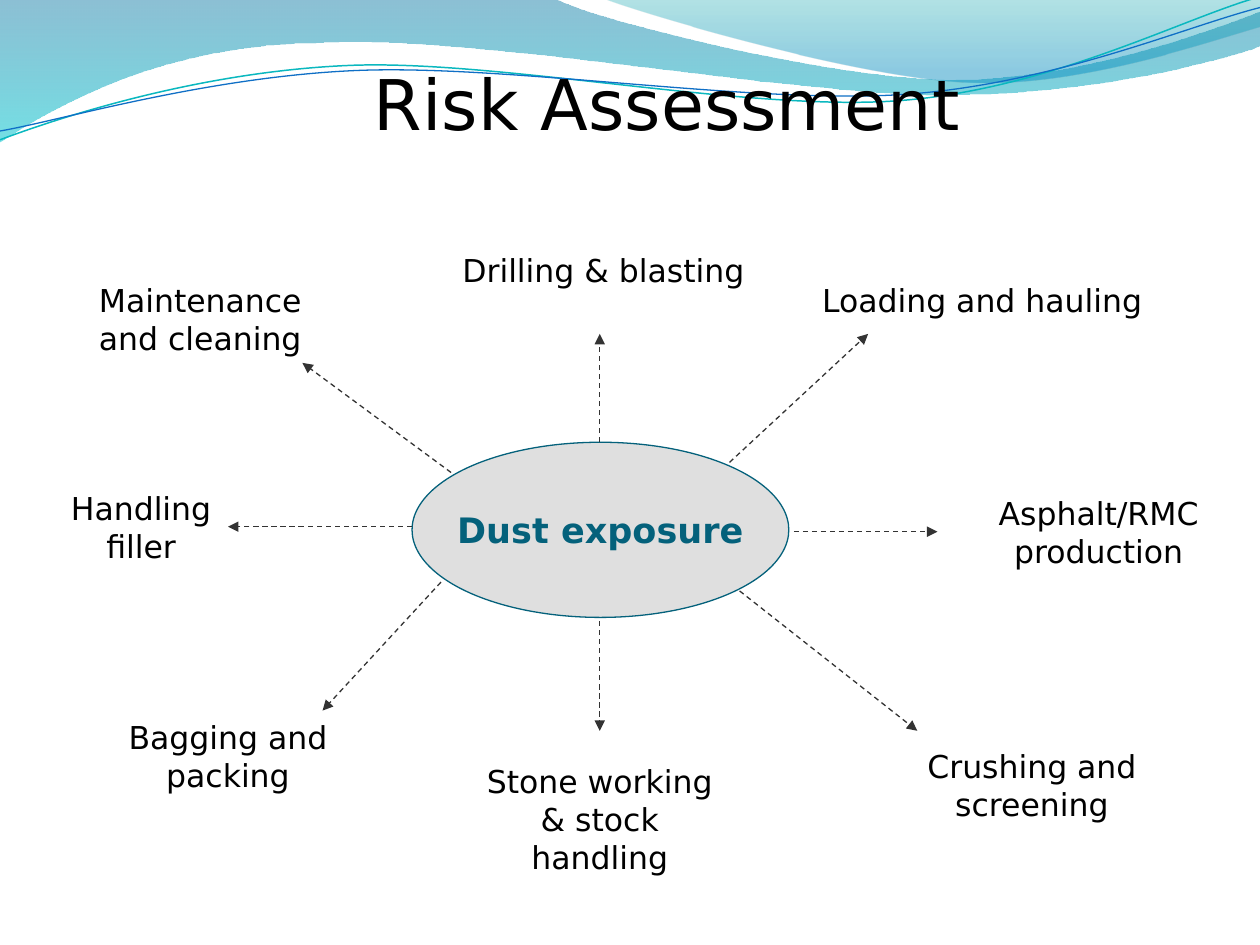
from lxml.etree import SubElement
from pptx import Presentation
from pptx.dml.color import RGBColor
from pptx.enum.dml import MSO_LINE_DASH_STYLE as Dash
from pptx.enum.shapes import MSO_CONNECTOR as Connector, MSO_SHAPE as Shape
from pptx.enum.text import MSO_ANCHOR as Anchor, MSO_AUTO_SIZE as AutoSize, PP_ALIGN as Align
from pptx.oxml.ns import qn
from pptx.util import Inches, Pt

FONT = "DejaVu Sans"
INK, TEAL, ARROW = "000000", "04617B", "333333"

BANDS = [
    ([(0, -0.01), (4.4, -0.01),
      [(4.76, 0.17), (6.64, 0.63), (7.58, 0.63)],
      [(8.53, 0.63), (9.58, 0.26), (10, 0.09)],
      (10.01, 0.36),
      [(9.83, 0.44), (8.7, 0.76), (7.46, 0.75)],
      [(6.22, 0.75), (3.82, 0.28), (2.57, 0.34)],
      [(1.29, 0.35), (0.46, 0.83), (-0.01, 1.13)]],
     [(0, "0074A1", 45), (1, "00C6CF", 55)]),
    ([(4.79, -0.01),
      [(5.09, 0.11), (6.82, 0.62), (7.69, 0.65)],
      [(8.56, 0.69), (9.61, 0.32), (10, 0.21)],
      (10, 0)],
     [(0, "00A1A9", 30), (0.8, "008BBF", 45)]),
]
STRANDS = [
    ([(0, 1.11),
      [(0.48, 0.93), (1.58, 0.57), (2.77, 0.52)],
      [(3.95, 0.47), (5.93, 0.89), (7.13, 0.8)],
      [(8.33, 0.71), (9.38, 0.15), (9.98, -0.02)]], "0AB8BF", 0.85),
    ([(0, 1.04),
      [(0.47, 0.96), (1.64, 0.61), (2.83, 0.56)],
      [(4.03, 0.51), (5.97, 0.83), (7.17, 0.75)],
      [(8.36, 0.67), (9.41, 0.21), (10, 0.06)]], "0F6FC6", 0.75),
]
ACTIVITIES = [
    ("Drilling & blasting", (3.56, 1.94, 2.46, 0.4), (4.76, 3.51), (4.76, 2.65)),
    ("Loading and hauling", (6.34, 2.18, 2.91, 0.4), (5.79, 3.67), (6.89, 2.65)),
    ("Asphalt/RMC production", (7.8, 3.87, 1.84, 0.71), (6.3, 4.22), (7.44, 4.22)),
    ("Crushing and screening", (7.05, 5.88, 2.28, 0.71), (5.87, 4.69), (7.28, 5.8)),
    ("Stone working & stock handling", (3.7, 6, 2.12, 1), (4.76, 4.93), (4.76, 5.8)),
    ("Bagging and packing", (0.51, 5.65, 2.6, 0.71), (3.5, 4.62), (2.56, 5.64)),
    ("Handling filler", (0.2, 3.83, 1.84, 0.71), (3.27, 4.18), (1.81, 4.18)),
    ("Maintenance and cleaning", (0.67, 2.18, 1.84, 0.71), (3.58, 3.75), (2.4, 2.88)),
]


def rgb(code):
    """Turn a hex string into a colour."""
    return RGBColor.from_string(code)


def inches(values):
    """Convert a sequence of numbers to lengths."""
    return [Inches(value) for value in values]


def set_alpha(color_parent, percent):
    """Make the colour inside an element partly transparent."""
    color = color_parent.find(".//" + qn("a:srgbClr"))
    SubElement(color, qn("a:alpha"), val=str(percent * 1000))


def add_outline(slide, outline, close):
    """Draw points and cubic curves as one freeform without shadow."""
    parts = [part if isinstance(part, list) else [part] for part in outline]
    points = [inches(point) for part in parts for point in part]
    builder = slide.shapes.build_freeform(*points[0])
    builder.add_line_segments(points[1:], close=close)
    shape = builder.convert_to_shape()
    shape.shadow.inherit = False
    segments = iter(shape.element.spPr.findall(".//" + qn("a:lnTo")))
    for part in parts[1:]:
        first, *others = [next(segments) for _ in part]
        if others:
            first.tag = qn("a:cubicBezTo")
        for segment in others:
            first.append(segment[0])
            segment.getparent().remove(segment)
    return shape


def add_waves(slide):
    """Draw the gradient bands and thin strands along the top edge."""
    for outline, stops in BANDS:
        band = add_outline(slide, outline, True)
        band.line.fill.background()
        band.fill.gradient()
        band.fill.gradient_angle = 270
        elements = band.element.spPr.findall(".//" + qn("a:gs"))
        for stop, element, (position, color, alpha) in zip(
                band.fill.gradient_stops, elements, stops):
            stop.position = position
            stop.color.rgb = rgb(color)
            set_alpha(element, alpha)
    for outline, color, width in STRANDS:
        strand = add_outline(slide, outline, False)
        strand.fill.background()
        strand.line.color.rgb = rgb(color)
        strand.line.width = Pt(width)


def write(frame, text, size, color=INK, bold=False):
    """Write one centred run into a text frame."""
    paragraph = frame.paragraphs[0]
    paragraph.alignment = Align.CENTER
    run = paragraph.add_run()
    run.text = text
    run.font.name = FONT
    run.font.size = Pt(size)
    run.font.bold = bold
    run.font.color.rgb = rgb(color)
    return paragraph


def add_title(slide, text, box):
    """Place the slide title."""
    frame = slide.shapes.add_textbox(*inches(box)).text_frame
    frame.word_wrap = True
    frame.margin_left = frame.margin_right = frame.margin_bottom = 0
    frame.margin_top = Inches(0.06)
    write(frame, text, 39.9).line_spacing = Pt(24)


def add_hub(slide, text, box):
    """Draw the ellipse at the centre of the diagram."""
    hub = slide.shapes.add_shape(Shape.OVAL, *inches(box))
    hub.shadow.inherit = False
    hub.fill.solid()
    hub.fill.fore_color.rgb = rgb("C0C0C0")
    set_alpha(hub.element.spPr.find(qn("a:solidFill")), 50)
    hub.line.color.rgb = rgb(TEAL)
    hub.line.width = Pt(0.75)
    hub.text_frame.word_wrap = False
    hub.text_frame.vertical_anchor = Anchor.MIDDLE
    write(hub.text_frame, text, 20, TEAL, True)


def add_activity(slide, text, box, start, end):
    """Place an activity label and the dashed arrow that leads to it."""
    arrow = slide.shapes.add_connector(Connector.STRAIGHT, *inches(start + end))
    arrow.line.color.rgb = rgb(ARROW)
    arrow.line.width = Pt(0.75)
    arrow.line.dash_style = Dash.DASH
    outline = arrow._element.spPr.find(qn("a:ln"))
    SubElement(outline, qn("a:tailEnd"), type="triangle")
    SubElement(arrow._element.spPr, qn("a:effectLst"))
    frame = slide.shapes.add_textbox(*inches(box)).text_frame
    frame.word_wrap = True
    frame.auto_size = AutoSize.SHAPE_TO_FIT_TEXT
    write(frame, text, 18)


def main():
    """Build the slide and save it."""
    deck = Presentation()
    deck.slide_width, deck.slide_height = Inches(10), Inches(7.5)
    slide = deck.slides.add_slide(deck.slide_layouts[6])
    add_waves(slide)
    add_hub(slide, "Dust exposure", (3.27, 3.51, 2.99, 1.39))
    for activity in ACTIVITIES:
        add_activity(slide, *activity)
    add_title(slide, "Risk Assessment", (0.64, 0.75, 9.31, 0.59))
    deck.save("out.pptx")


if __name__ == "__main__":
    main()
